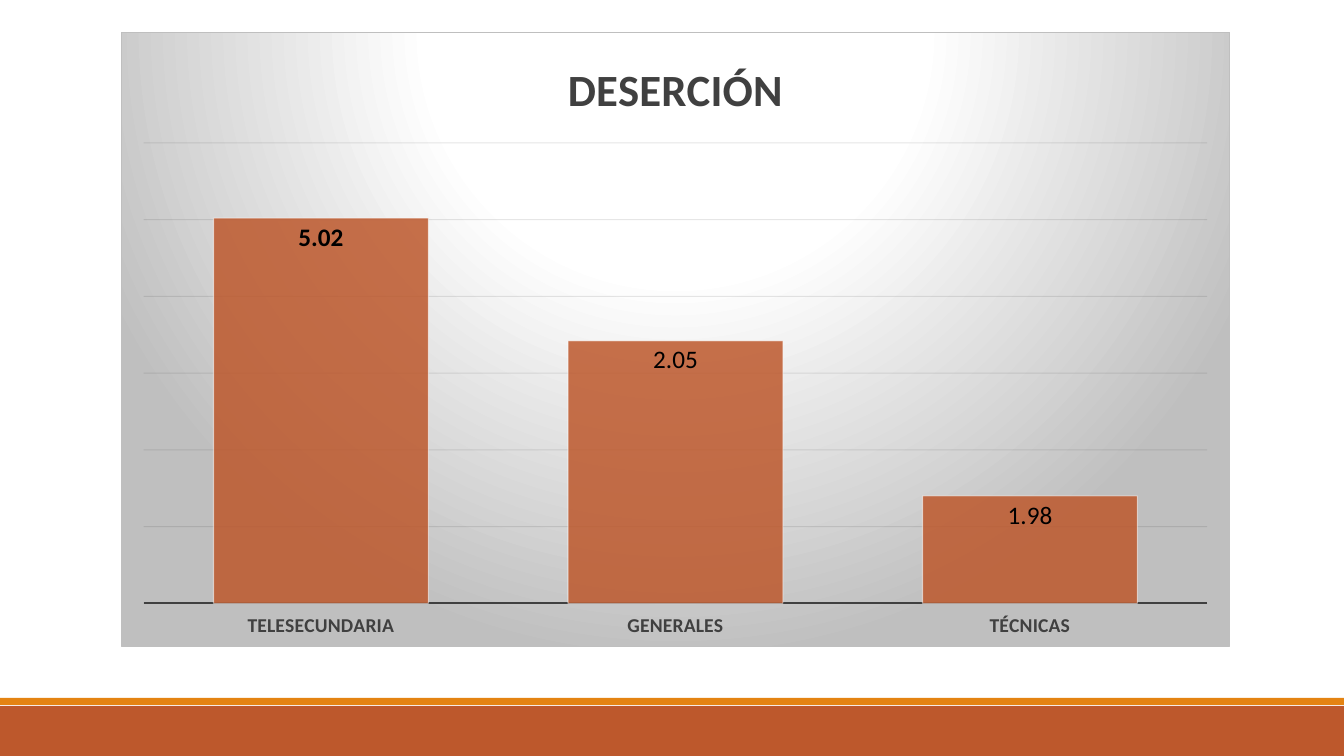
from lxml import etree
from pptx import Presentation
from pptx.chart.data import CategoryChartData
from pptx.dml.color import RGBColor
from pptx.enum.chart import XL_CHART_TYPE, XL_LABEL_POSITION, XL_TICK_LABEL_POSITION, XL_TICK_MARK
from pptx.enum.shapes import MSO_SHAPE
from pptx.oxml import parse_xml
from pptx.oxml.ns import nsdecls, qn
from pptx.util import Pt

PX = 914400 / 100.8
COLUMNS = XL_CHART_TYPE.COLUMN_CLUSTERED
INSIDE_END = XL_LABEL_POSITION.INSIDE_END
NO_TICKS = XL_TICK_MARK.NONE
LABELS_LOW = XL_TICK_LABEL_POSITION.LOW
RECTANGLE = MSO_SHAPE.RECTANGLE

FONT = "Calibri"
COLORS = {
    "rust": "BD582C",
    "orange": "E48312",
    "text": "404040",
    "label": "000000",
    "grid": "0D0D0D",
    "white": "FFFFFF",
    "gray": "BFBFBF",
}

TITLE = "DESERCIÓN"
DROPOUT = {"TELESECUNDARIA": 5.02, "GENERALES": 3.42, "TÉCNICAS": 1.4}
SHOWN_VALUES = {1: "2.05", 2: "1.98"}


def px(length):
    return round(length * PX)


def rgb(name):
    return RGBColor.from_string(COLORS[name])


def set_font(font, size, color, bold=False):
    font.name = FONT
    font.size = Pt(size)
    font.bold = bold
    font.color.rgb = rgb(color)


def set_line(line, color, width):
    line.color.rgb = rgb(color)
    line.width = Pt(width)


def set_alpha(color_element, percent):
    etree.SubElement(color_element, qn("a:alpha"), val=str(percent * 1000))


def add_band(slide, top, height, color):
    band = slide.shapes.add_shape(RECTANGLE, 0, px(top), px(1344), px(height))
    band.shadow.inherit = False
    band.fill.solid()
    band.fill.fore_color.rgb = rgb(color)
    band.line.fill.background()


def set_chart_background(chart):
    stops = "".join(
        f'<a:gs pos="{pos * 1000}"><a:srgbClr val="{COLORS[color]}"/></a:gs>'
        for pos, color in ((0, "white"), (39, "white"), (100, "gray"))
    )
    background = parse_xml(
        f'<c:spPr {nsdecls("c", "a")}>'
        f'<a:gradFill><a:gsLst>{stops}</a:gsLst><a:path path="circle">'
        '<a:fillToRect l="50000" t="-80000" r="50000" b="180000"/></a:path></a:gradFill>'
        f'<a:ln w="9525"><a:solidFill><a:srgbClr val="{COLORS["gray"]}"/></a:solidFill></a:ln>'
        '</c:spPr>'
    )
    chart._chartSpace.find(qn("c:chart")).addnext(background)


def set_plot_area(chart, x, y, w, h):
    plot_area = chart._chartSpace.find(qn("c:chart")).find(qn("c:plotArea"))
    for old_layout in plot_area.findall(qn("c:layout")):
        plot_area.remove(old_layout)
    sizes = "".join(f'<c:{key} val="{value}"/>' for key, value in zip("xywh", (x, y, w, h)))
    plot_area.insert(0, parse_xml(
        f'<c:layout {nsdecls("c")}><c:manualLayout><c:layoutTarget val="inner"/>'
        f'<c:xMode val="edge"/><c:yMode val="edge"/>{sizes}</c:manualLayout></c:layout>'
    ))


def format_axes(chart):
    schools = chart.category_axis
    schools.major_tick_mark = schools.minor_tick_mark = NO_TICKS
    schools.tick_label_position = LABELS_LOW
    schools.has_major_gridlines = False
    set_font(schools.tick_labels.font, 14, "text", bold=True)
    set_line(schools.format.line, "text", 1.5)

    rates = chart.value_axis
    rates.minimum_scale, rates.maximum_scale, rates.major_unit = 0, 6, 1
    rates.has_major_gridlines = True
    set_line(rates.major_gridlines.format.line, "grid", 0.75)
    gridlines = rates._element.find(qn("c:majorGridlines"))
    set_alpha(next(gridlines.iter(qn("a:srgbClr"))), 10)
    rates.visible = False


def format_columns(chart):
    plot = chart.plots[0]
    plot.gap_width = 65
    plot.vary_by_categories = False
    columns = plot.series[0]
    columns.format.fill.solid()
    columns.format.fill.fore_color.rgb = rgb("rust")
    set_line(columns.format.line, "white", 0.75)
    column_colors = columns._element.find(qn("c:spPr")).iter(qn("a:srgbClr"))
    for color_element, percent in zip(list(column_colors), (85, 50)):
        set_alpha(color_element, percent)

    labels = columns.data_labels
    labels.show_value = True
    labels.position = INSIDE_END
    set_font(labels.font, 18, "label", bold=True)
    for index, shown in SHOWN_VALUES.items():
        label = columns.points[index].data_label
        run = label.text_frame.paragraphs[0].add_run()
        run.text = shown
        set_font(run.font, 18, "label")
        label.position = INSIDE_END


def add_dropout_chart(slide):
    data = CategoryChartData()
    data.categories = list(DROPOUT)
    data.add_series(TITLE, list(DROPOUT.values()))
    chart = slide.shapes.add_chart(COLUMNS, px(121), px(32), px(1109), px(615), data).chart
    set_font(chart.font, 10, "label")
    chart.has_legend = False
    chart.has_title = True
    heading = chart.chart_title.text_frame.paragraphs[0].add_run()
    heading.text = TITLE
    set_font(heading.font, 32, "text", bold=True)
    chart.chart_title.include_in_layout = False
    set_chart_background(chart)
    set_plot_area(chart, 0.02, 0.18, 0.96, 0.75)
    format_axes(chart)
    format_columns(chart)


def main():
    deck = Presentation()
    deck.slide_width, deck.slide_height = px(1344), px(756)
    slide = deck.slides.add_slide(deck.slide_layouts[6])

    # Footer bands
    add_band(slide, 706, 50, "rust")
    add_band(slide, 698, 7, "orange")

    # Dropout by kind of school
    add_dropout_chart(slide)

    deck.save("out.pptx")


if __name__ == "__main__":
    main()
